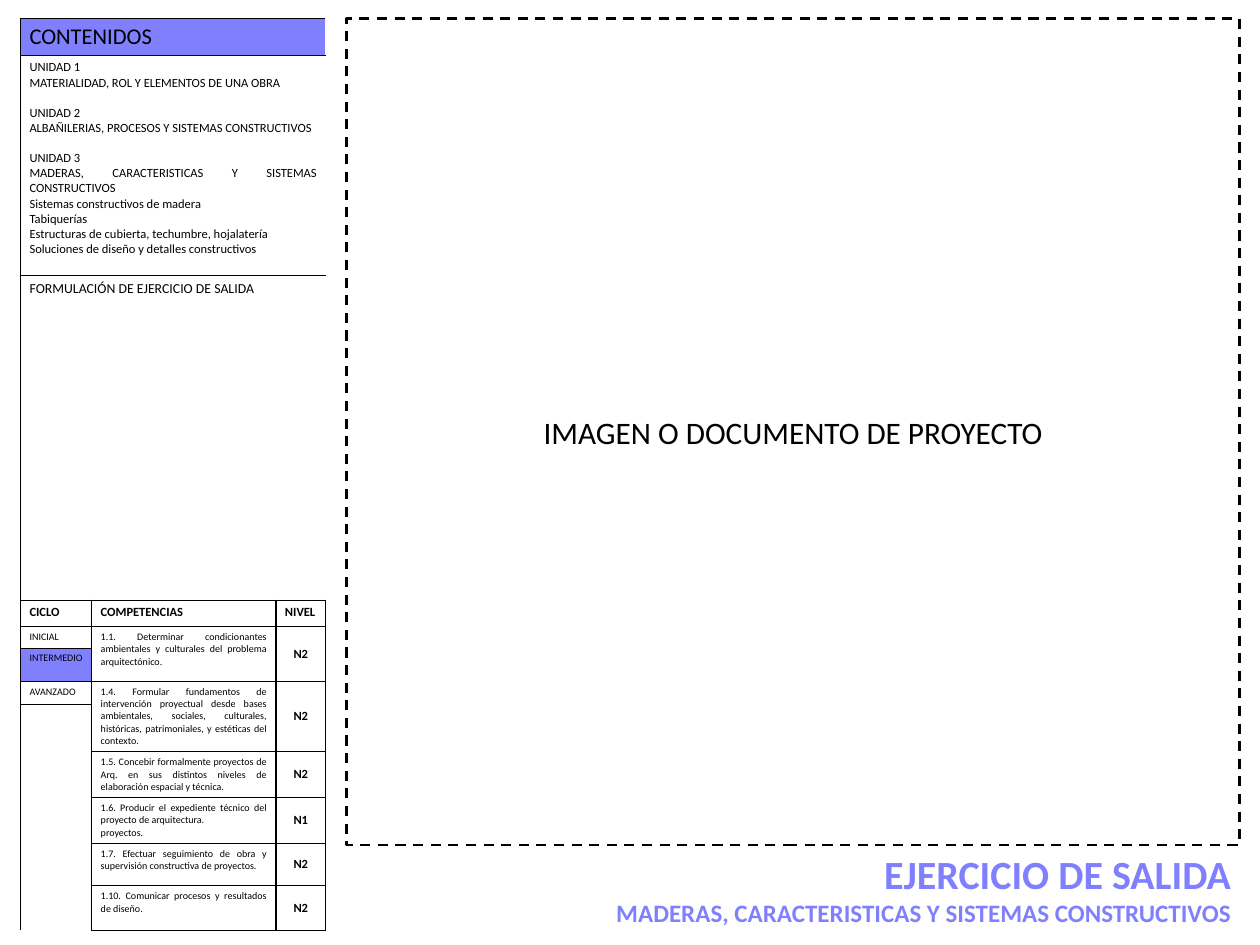
"""Build the course exercise sheet: contents table, project frame and title."""
import pptx
import pptx.dml.color
import pptx.enum.dml
import pptx.enum.shapes
import pptx.enum.text
import pptx.oxml
import pptx.oxml.ns
import pptx.util

Cm, Pt = pptx.util.Cm, pptx.util.Pt
ALIGN, ANCHOR = pptx.enum.text.PP_ALIGN, pptx.enum.text.MSO_ANCHOR
ACCENT, BLACK = "8080FF", "000000"

COLUMN_WIDTHS = [2.01, 5.2, 1.4]
ROW_HEIGHTS = [1.04, 6.2, 9.17, 0.74, 0.58, 0.94, 0.65, 1.3, 1.27, 1.27, 1.19, 1.27]
THIN, REGULAR = 0.5, 1

UNITS = [
    ["UNIDAD 1", "MATERIALIDAD, ROL Y ELEMENTOS DE UNA OBRA"],
    ["UNIDAD 2", "ALBAÑILERIAS, PROCESOS Y SISTEMAS CONSTRUCTIVOS"],
    ["UNIDAD 3", "MADERAS, CARACTERISTICAS Y SISTEMAS CONSTRUCTIVOS",
     "Sistemas constructivos de madera", "Tabiquerías",
     "Estructuras de cubierta, techumbre, hojalatería",
     "Soluciones de diseño y detalles constructivos"],
]
HEADINGS = ["CICLO", "COMPETENCIAS", "NIVEL"]
CYCLES = [("INICIAL", None), ("INTERMEDIO", ACCENT), ("AVANZADO", None)]
COMPETENCES = [
    (2, "N2", ["1.1. Determinar condicionantes ambientales y culturales del problema arquitectónico."]),
    (2, "N2", ["1.4. Formular fundamentos de intervención proyectual desde bases ambientales, "
               "sociales, culturales, históricas, patrimoniales, y estéticas del contexto."]),
    (1, "N2", ["1.5. Concebir formalmente proyectos de Arq. en sus distintos niveles de "
               "elaboración espacial y técnica."]),
    (1, "N1", ["1.6. Producir el expediente técnico del proyecto de arquitectura.", "proyectos."]),
    (1, "N2", ["1.7. Efectuar seguimiento de obra y supervisión constructiva de proyectos."]),
    (1, "N2", ["1.10. Comunicar procesos y resultados de diseño."]),
]
TITLE = [("EJERCICIO DE SALIDA", 32), ("MADERAS, CARACTERISTICAS Y SISTEMAS CONSTRUCTIVOS", 20)]
FRAME_TEXT = "IMAGEN O DOCUMENTO DE PROYECTO"


def color(value):
    return pptx.dml.color.RGBColor.from_string(value)


def write(text_frame, lines, align=ALIGN.JUSTIFY, ink=BLACK, **font_values):
    for index, (text, size, space) in enumerate(lines):
        paragraph = text_frame.paragraphs[0] if index == 0 else text_frame.add_paragraph()
        paragraph.alignment = align
        if space:
            paragraph.space_before = Pt(space)
        run = paragraph.add_run()
        run.text = text
        run.font.color.rgb = color(ink)
        for name, value in {"name": "Calibri", "size": Pt(size), **font_values}.items():
            setattr(run.font, name, value)


def add_border(cell, side, width):
    properties = cell._tc.get_or_add_tcPr()
    properties.append(pptx.oxml.parse_xml(
        f'<a:ln{side} {pptx.oxml.ns.nsdecls("a")} w="{Pt(width)}">'
        f'<a:solidFill><a:srgbClr val="{BLACK}"/></a:solidFill></a:ln{side}>'))


def edge_width(row, column):
    return THIN if row == 1 or (column == 0 and row >= 4) else REGULAR


def fill_block(table, row, column, lines, rows=1, columns=1, fill=None,
               anchor=ANCHOR.TOP, **text_values):
    last_row, last_column = row + rows - 1, column + columns - 1
    origin = table.cell(row, column)
    if rows * columns > 1:
        origin.merge(table.cell(last_row, last_column))
    for r in range(row, last_row + 1):
        for c in range(column, last_column + 1):
            cell = table.cell(r, c)
            edges = [("L", c == column, REGULAR), ("R", c == last_column, REGULAR),
                     ("T", r == row, edge_width(r - 1, c)), ("B", r == last_row, edge_width(r, c))]
            for side, on_boundary, width in edges:
                if on_boundary:
                    add_border(cell, side, width)
            if fill:
                cell.fill.solid()
                cell.fill.fore_color.rgb = color(fill)
            else:
                cell.fill.background()
    origin.vertical_anchor = anchor
    write(origin.text_frame, lines, **text_values)


def add_contents_table(slide):
    shape = slide.shapes.add_table(len(ROW_HEIGHTS), len(COLUMN_WIDTHS), Cm(0.58), Cm(0.53),
                                   Cm(sum(COLUMN_WIDTHS)), Cm(sum(ROW_HEIGHTS)))
    table = shape.table
    table.first_row = table.horz_banding = False
    for column, width in zip(table.columns, COLUMN_WIDTHS):
        column.width = Cm(width)
    for row, height in zip(table.rows, ROW_HEIGHTS):
        row.height = Cm(height)

    unit_lines = [(text, 10, 12 if number and not index else 0)
                  for number, unit in enumerate(UNITS) for index, text in enumerate(unit)]
    fill_block(table, 0, 0, [("CONTENIDOS", 18, 0)], columns=3, fill=ACCENT)
    fill_block(table, 1, 0, unit_lines, columns=3)
    fill_block(table, 2, 0, [("FORMULACIÓN DE EJERCICIO DE SALIDA", 11, 0)], columns=3)
    for column, heading in enumerate(HEADINGS):
        fill_block(table, 3, column, [(heading, 10, 0)], bold=True)
    for row, (cycle, fill) in enumerate(CYCLES, 4):
        fill_block(table, row, 0, [(cycle, 8, 0)], fill=fill)
    fill_block(table, 7, 0, [], rows=5)
    row = 4
    for rows, level, lines in COMPETENCES:
        fill_block(table, row, 1, [(text, 8, 0) for text in lines], rows=rows)
        fill_block(table, row, 2, [(level, 10, 0)], rows=rows, anchor=ANCHOR.MIDDLE,
                   align=ALIGN.CENTER, bold=True)
        row += rows


def add_title(slide):
    text_frame = slide.shapes.add_textbox(Cm(11.15), Cm(23.85), Cm(23.85), Cm(2.49)).text_frame
    text_frame.word_wrap = True
    text_frame.auto_size = pptx.enum.text.MSO_AUTO_SIZE.SHAPE_TO_FIT_TEXT
    write(text_frame, [(text, size, 0) for text, size in TITLE],
          align=ALIGN.RIGHT, ink=ACCENT, bold=True)


def add_project_frame(slide):
    frame = slide.shapes.add_shape(pptx.enum.shapes.MSO_SHAPE.RECTANGLE,
                                   Cm(9.78), Cm(0.53), Cm(25.2), Cm(23.32))
    frame.shadow.inherit = False
    frame.fill.background()
    frame.line.color.rgb = color(BLACK)
    for name, value in {"width": Pt(2), "dash_style": pptx.enum.dml.MSO_LINE.DASH}.items():
        setattr(frame.line, name, value)
    frame.text_frame.vertical_anchor = ANCHOR.MIDDLE
    write(frame.text_frame, [(FRAME_TEXT, 25, 0)], align=ALIGN.CENTER)


def main():
    presentation = pptx.Presentation()
    presentation.slide_width, presentation.slide_height = Cm(35.56), Cm(26.67)
    slide = presentation.slides.add_slide(presentation.slide_layouts[6])
    add_contents_table(slide)
    add_title(slide)
    add_project_frame(slide)
    presentation.save("out.pptx")


if __name__ == "__main__":
    main()
